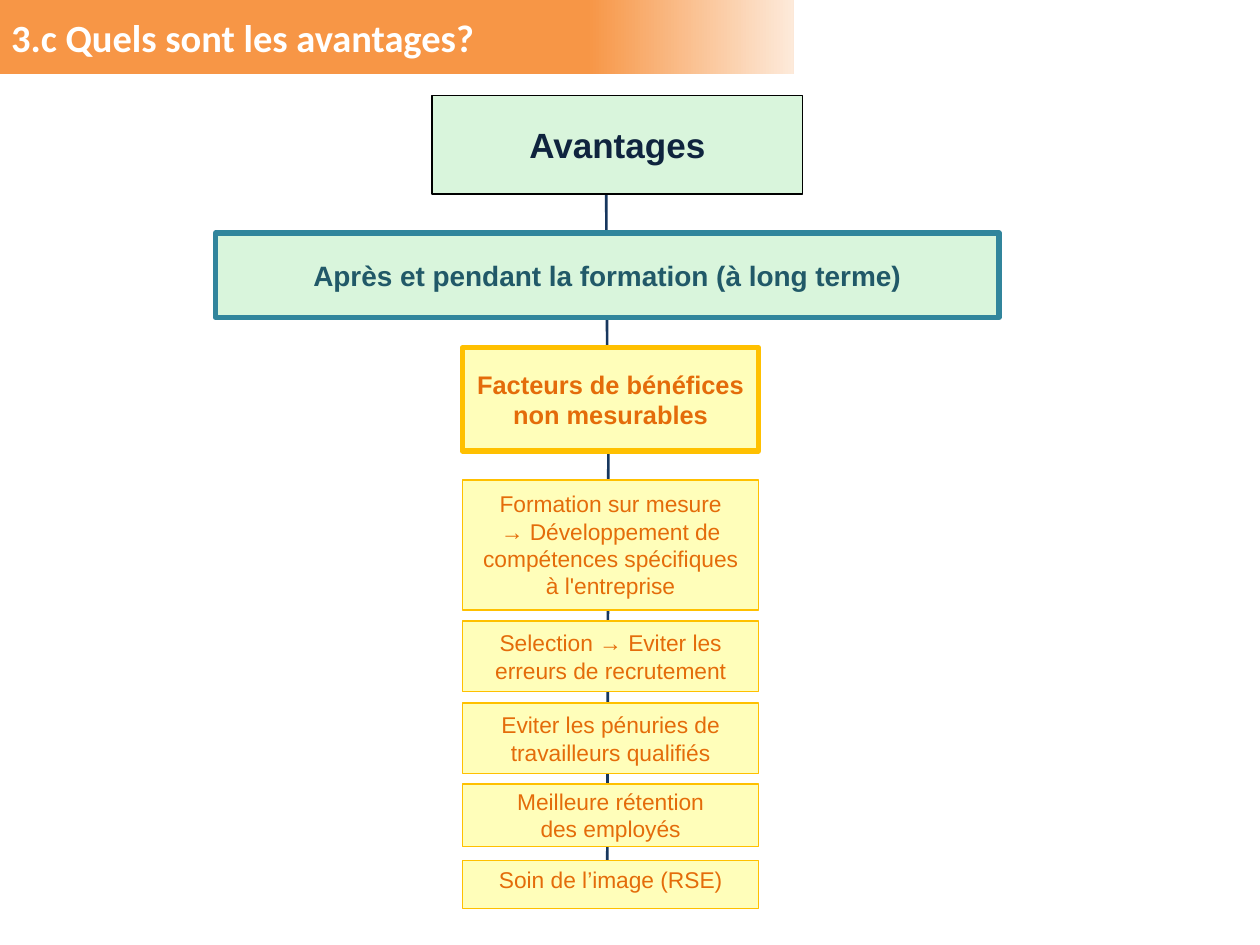
from lxml import etree
from pptx import Presentation, util as u
from pptx.dml.color import RGBColor
from pptx.enum import shapes, text
from pptx.oxml.ns import qn

# Content: lengths are in columns and rows of a 100 x 75 grid
COLUMNS, ROWS = 100, 75
COLORS = {
    "orange": "F79646", "cream": "FDEADA", "navy": "17375E", "mint": "D9F5DC",
    "yellow": "FFFEBA", "gold": "FFC000", "teal": "31859C", "black": "000000",
    "white": "FFFFFF", "ink": "0F243E", "deep teal": "215968", "rust": "E46C0A",
}
TITLE = "3.c Quels sont les avantages?"
TRUNK = [((48.1, 13.4), (48.2, 29)), ((48.3, 29.5), (48.2, 68.6))]

# Style: fill, line, line width, text colour, size, bold, wrap
STYLES = {
    "root": ("mint", "black", 0.75, "ink", 20, True, False),
    "phase": ("mint", "teal", 3, "deep teal", 16, True, False),
    "factor": ("yellow", "gold", 3, "rust", 14.5, True, True),
    "benefit": ("yellow", "gold", 1, "rust", 13, False, True),
    "last benefit": ("yellow", "gold", 0.75, "rust", 13, False, False),
}
# Box: style, centre column, top row, width, height, text (\v breaks a line)
FACTOR_CENTER, FACTOR_WIDTH = 48.45, 23.5
BOXES = [
    ("root", 49, 7.6, 29.4, 7.8, "Avantages"),
    ("phase", 48.2, 18.5, 62.2, 6.7, "Après et pendant la formation (à long terme)"),
] + [
    (style, FACTOR_CENTER, top, FACTOR_WIDTH, height, words)
    for style, top, height, words in [
        ("factor", 27.6, 8.2, "Facteurs de bénéfices non mesurables"),
        ("benefit", 38.1, 10.3, "Formation sur mesure\v→ Développement de "
                                "compétences spécifiques à l'entreprise"),
        ("benefit", 49.3, 5.6, "Selection → Eviter les erreurs de recrutement"),
        ("benefit", 55.8, 5.6, "Eviter les pénuries de travailleurs qualifiés"),
        ("benefit", 62.2, 5, "Meilleure rétention\vdes employés"),
        ("last benefit", 68.3, 3.8, "Soin de l’image (RSE)"),
    ]
]

presentation = Presentation()
presentation.slide_width, presentation.slide_height = u.Inches(10), u.Inches(7.5)
slide = presentation.slides.add_slide(presentation.slide_layouts[6])


def color(name):
    return RGBColor.from_string(COLORS[name])


def grid(*lengths):
    """Turn alternating column and row counts into slide lengths."""
    steps = (presentation.slide_width / COLUMNS, presentation.slide_height / ROWS)
    return [round(length * steps[i % 2]) for i, length in enumerate(lengths)]


def set_all(target, values):
    for name, value in values.items():
        setattr(target, name, value)


def write(shape, words, frame_format, font_format, font_color, alignment):
    frame = shape.text_frame
    set_all(frame, frame_format)
    paragraph = frame.paragraphs[0]
    paragraph.text = words
    paragraph.alignment = alignment
    for run in paragraph.runs:
        set_all(run.font, font_format)
        run.font.color.rgb = color(font_color)


def add_rectangle(*place):
    shape = slide.shapes.add_shape(shapes.MSO_SHAPE.RECTANGLE, *grid(*place))
    shape.shadow.inherit = False
    return shape


def add_box(style, center, top, width, height, words):
    fill, line, line_width, font_color, size, bold, wrap = STYLES[style]
    shape = add_rectangle(center - width / 2, top, width, height)
    shape.fill.solid()
    shape.fill.fore_color.rgb = color(fill)
    shape.line.color.rgb = color(line)
    shape.line.width = u.Pt(line_width)
    frame_format = {"word_wrap": wrap, "vertical_anchor": text.MSO_ANCHOR.MIDDLE}
    if style == "last benefit":
        frame_format["vertical_anchor"] = text.MSO_ANCHOR.TOP
        for side in ("left", "top", "right", "bottom"):
            frame_format["margin_" + side] = u.Inches(0.04)
    write(shape, words, frame_format,
          {"name": "Arial", "size": u.Pt(size), "bold": bold},
          font_color, text.PP_ALIGN.CENTER)


# Title band
band = add_rectangle(0, 0, 63, 5.9)
band.line.fill.background()
band.fill.gradient()
band.fill.gradient_angle = 0
for stop, (position, name) in zip(band.fill.gradient_stops,
                                  [(0.74, "orange"), (1, "cream")]):
    stop.position = position
    stop.color.rgb = color(name)

# Trunk behind the boxes
for start, end in TRUNK:
    connector = slide.shapes.add_connector(
        shapes.MSO_CONNECTOR.STRAIGHT, *grid(*start, *end))
    connector.line.color.rgb = color("navy")
    connector.line.width = u.Pt(1.5)
    etree.SubElement(connector._element.spPr, qn("a:effectLst"))

# Boxes
for box in BOXES:
    add_box(*box)

# Title
title = slide.shapes.add_textbox(*grid(-0.1, 0.6, 63.5, 4.7))
write(title, TITLE,
      {"word_wrap": True, "auto_size": text.MSO_AUTO_SIZE.SHAPE_TO_FIT_TEXT},
      {"name": "Calibri", "size": u.Pt(22), "bold": True},
      "white", text.PP_ALIGN.LEFT)

presentation.save("out.pptx")
